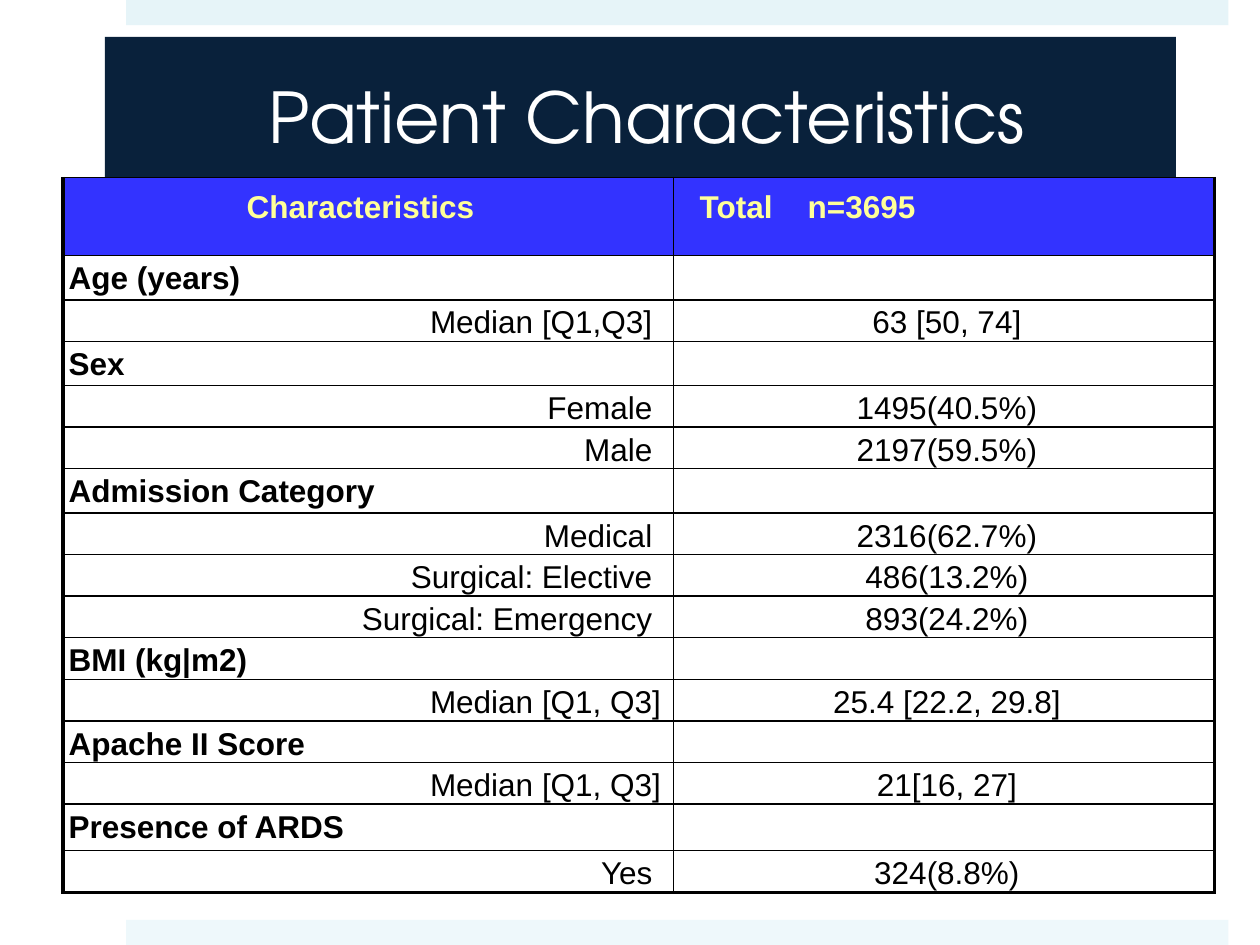
from lxml import etree
from pptx import Presentation
from pptx import util as u
from pptx.dml.color import RGBColor
from pptx.enum import shapes, text
from pptx.oxml import ns

NAVY = RGBColor(0x09, 0x21, 0x3B)
TOP_BAND = RGBColor(0xE6, 0xF4, 0xF8)
BOTTOM_BAND = RGBColor(0xEE, 0xF8, 0xFB)
HEADER_BLUE = RGBColor(0x33, 0x33, 0xFF)
HEADER_YELLOW = RGBColor(0xFF, 0xFF, 0x99)
WHITE = RGBColor(0xFF, 0xFF, 0xFF)
BLACK = RGBColor(0, 0, 0)

LEFT, CENTER, RIGHT = text.PP_ALIGN.LEFT, text.PP_ALIGN.CENTER, text.PP_ALIGN.RIGHT
INSET = 3.25
THIN, THICK = 1, 2.25
HEADER_HEIGHT, ROW_HEIGHT = 44.6, 23.8
TALL_ROWS = {1: 25.2, 3: 25.2, 6: 25.2, 14: 26.6}
COLUMN_WIDTHS = (349, 309)

GROUPS = [
    ("Age (years)", [("Median [Q1,Q3] ", "63 [50, 74]")]),
    ("Sex", [("Female ", "1495(40.5%)"), ("Male ", "2197(59.5%)")]),
    ("Admission Category", [
        ("Medical ", "2316(62.7%)"),
        ("Surgical: Elective ", "486(13.2%)"),
        ("Surgical: Emergency ", "893(24.2%)"),
    ]),
    ("BMI (kg|m2)", [("Median [Q1, Q3]", "25.4 [22.2, 29.8]")]),
    ("Apache II Score", [("Median [Q1, Q3]", "21[16, 27]")]),
    ("Presence of ARDS", [("Yes ", "324(8.8%)")]),
]


def style_font(paragraph, name, size, color, bold=False):
    font = paragraph.font
    font.name, font.size, font.bold = name, u.Pt(size), bold
    font.color.rgb = color


def add_panel(slide, left, top, width, height, color):
    panel = slide.shapes.add_shape(
        shapes.MSO_SHAPE.RECTANGLE, u.Pt(left), u.Pt(top), u.Pt(width), u.Pt(height))
    panel.shadow.inherit = False
    panel.fill.solid()
    panel.fill.fore_color.rgb = color
    panel.line.fill.background()
    return panel


def add_title(slide, wording):
    frame = add_panel(slide, 60, 21, 612, 90, NAVY).text_frame
    frame.word_wrap = True
    frame.vertical_anchor = text.MSO_ANCHOR.MIDDLE
    frame.margin_left, frame.margin_right = u.Pt(93.6), u.Pt(21.6)
    title = frame.paragraphs[0]
    title.text = wording
    title.alignment = LEFT
    style_font(title, "TeX Gyre Adventor", 40, WHITE)


def set_borders(cell, **widths):
    properties = cell._tc.get_or_add_tcPr()
    for position, (side, width) in enumerate(widths.items()):
        border = etree.Element(ns.qn(f"a:ln{side}"), w=str(u.Pt(width)))
        fill = etree.SubElement(border, ns.qn("a:solidFill"))
        etree.SubElement(fill, ns.qn("a:srgbClr"), val=str(BLACK))
        properties.insert(position, border)


def add_tab_stop(paragraph, position):
    stops = etree.SubElement(paragraph._p.get_or_add_pPr(), ns.qn("a:tabLst"))
    etree.SubElement(stops, ns.qn("a:tab"), pos=str(u.Pt(position)), algn="l")


def fill_cell(cell, wording, align, fill=WHITE, color=BLACK, bold=False,
              left=INSET, top=INSET, right=7.2, tab=None):
    cell.fill.solid()
    cell.fill.fore_color.rgb = fill
    cell.margin_left, cell.margin_top = u.Pt(left), u.Pt(top)
    cell.margin_right, cell.margin_bottom = u.Pt(right), 0
    entry = cell.text_frame.paragraphs[0]
    entry.text = wording
    entry.alignment = align
    if tab:
        add_tab_stop(entry, tab)
    style_font(entry, "Arial", 18, color, bold)


def add_characteristics(slide):
    rows = []
    for heading, measures in GROUPS:
        rows.append((heading, "", True))
        rows += [(label, value, False) for label, value in measures]
    last = len(rows)
    heights = [HEADER_HEIGHT] + [TALL_ROWS.get(i, ROW_HEIGHT) for i in range(1, last + 1)]
    table = slide.shapes.add_table(
        last + 1, 2, u.Pt(36), u.Pt(101.5), u.Pt(sum(COLUMN_WIDTHS)), u.Pt(sum(heights))).table
    table.first_row = table.horz_banding = False
    for column, width in zip(table.columns, COLUMN_WIDTHS):
        column.width = u.Pt(width)
    for row, height in zip(table.rows, heights):
        row.height = u.Pt(height)

    header = dict(fill=HEADER_BLUE, color=HEADER_YELLOW, bold=True, top=7.2)
    fill_cell(table.cell(0, 0), "Characteristics ", CENTER, **header)
    fill_cell(table.cell(0, 1), "Total\tn=3695", LEFT, left=14.9, tab=61.7, **header)
    for index, (label, value, is_heading) in enumerate(rows, 1):
        fill_cell(table.cell(index, 0), label, LEFT if is_heading else RIGHT, bold=is_heading)
        fill_cell(table.cell(index, 1), value, CENTER, right=0)
    for index in range(last + 1):
        bottom = THICK if index == last else THIN
        set_borders(table.cell(index, 0), L=THICK, R=THIN, T=THIN, B=bottom)
        set_borders(table.cell(index, 1), L=THIN, R=THICK, T=THIN, B=bottom)


def main():
    deck = Presentation()
    deck.slide_width, deck.slide_height = u.Pt(720), u.Pt(540)
    slide = deck.slides.add_slide(deck.slide_layouts[6])
    add_panel(slide, 72, 0, 630, 14.4, TOP_BAND)
    add_panel(slide, 72, 525.6, 630, 14.4, BOTTOM_BAND)
    add_title(slide, "Patient Characteristics")
    add_characteristics(slide)
    deck.save("out.pptx")


if __name__ == "__main__":
    main()
